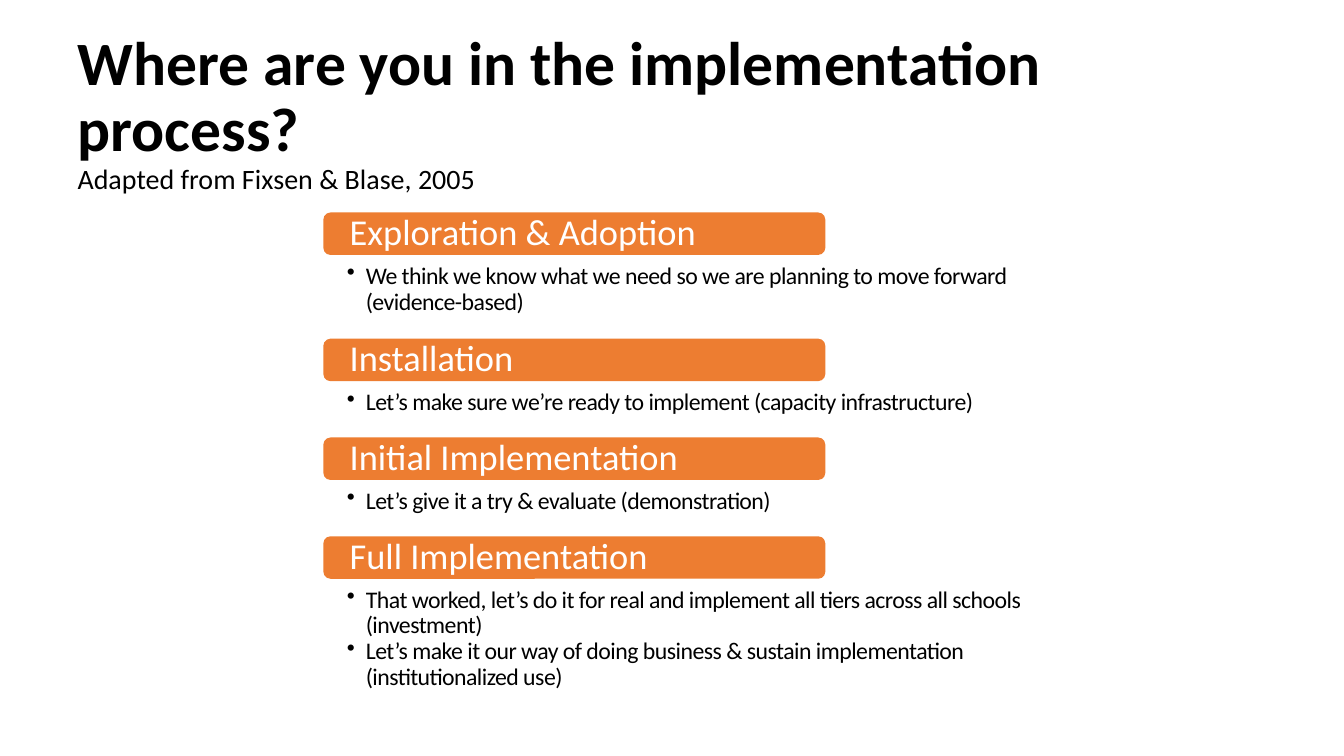
from lxml.etree import SubElement
from pptx import Presentation
from pptx.dml.color import RGBColor
from pptx.enum.shapes import MSO_SHAPE
from pptx.enum.text import MSO_ANCHOR, MSO_AUTO_SIZE, PP_ALIGN
from pptx.oxml.ns import qn
from pptx.util import Cm, Pt

QUESTION = "Where are you in the implementation process?"
CREDIT = "Adapted from Fixsen & Blase, 2005"
STAGES = [
    ("Exploration & Adoption", 2.44,
     ["We think we know what we need so we are planning to move forward (evidence-based)"]),
    ("Installation", 1.75,
     ["Let’s make sure we’re ready to implement (capacity infrastructure)"]),
    ("Initial Implementation", 1.75,
     ["Let’s give it a try & evaluate (demonstration)"]),
    ("Full Implementation", 3.76,
     ["That worked, let’s do it for real and implement all tiers across all schools (investment)",
      "Let’s make it our way of doing business & sustain implementation (institutionalized use)"]),
]

FONT = "Calibri"
BLACK = RGBColor(0x00, 0x00, 0x00)
WHITE = RGBColor(0xFF, 0xFF, 0xFF)
ORANGE = RGBColor(0xED, 0x7D, 0x31)

PANEL_LEFT, PANEL_WIDTH = 7.09, 21.23
HEADER_LEFT, HEADER_WIDTH, HEADER_HEIGHT = 8.15, 12.65, 1.07
FIRST_TOP, STAGE_GAP = 5.89, 0.74


def set_font(font, size, color, bold=False):
    font.name, font.size, font.bold = FONT, Pt(size), bold
    font.color.rgb = color


def add_box(slide, preset, place, fill, insets, anchor):
    box = slide.shapes.add_shape(preset, *(Cm(length) for length in place))
    box.shadow.inherit = False
    box.fill.solid()
    box.fill.fore_color.rgb = fill
    box.line.fill.background()
    frame = box.text_frame
    frame.word_wrap = True
    frame.vertical_anchor = anchor
    frame.margin_left, frame.margin_top, frame.margin_right, frame.margin_bottom = (
        Cm(inset) for inset in insets)
    return frame


def write_paragraph(paragraph, text, size, color):
    paragraph.text = text
    paragraph.alignment = PP_ALIGN.LEFT
    paragraph.line_spacing = 0.9
    set_font(paragraph.font, size, color)


def add_bullet(paragraph):
    properties = paragraph._p.get_or_add_pPr()
    properties.set("marL", str(Cm(0.48)))
    properties.set("indent", str(-Cm(0.48)))
    defaults = properties.find(qn("a:defRPr"))
    defaults.set("spc", "-40")
    bullet = SubElement(properties, qn("a:buChar"))
    bullet.set("char", "•")
    defaults.addprevious(bullet)


def add_title(slide):
    title = slide.shapes.title
    title.left, title.top, title.width, title.height = Cm(1.7), Cm(1.02), Cm(29.82), Cm(3.68)
    frame = title.text_frame
    frame.word_wrap = True
    frame.auto_size = MSO_AUTO_SIZE.NONE
    frame.vertical_anchor = MSO_ANCHOR.MIDDLE
    heading = frame.paragraphs[0]
    heading.alignment = PP_ALIGN.LEFT
    heading.line_spacing = 0.9
    question = heading.add_run()
    question.text = QUESTION
    set_font(question.font, 44, BLACK, True)
    heading.add_line_break()
    credit = heading.add_run()
    credit.text = CREDIT
    set_font(credit.font, 20, BLACK)


def add_stage(slide, top, name, height, statements):
    panel = add_box(slide, MSO_SHAPE.RECTANGLE, (PANEL_LEFT, top, PANEL_WIDTH, height),
                    WHITE, (1.65, 0.76, 1.65, 0.33), MSO_ANCHOR.TOP)
    for index, statement in enumerate(statements):
        paragraph = panel.add_paragraph() if index else panel.paragraphs[0]
        write_paragraph(paragraph, statement, 17, BLACK)
        add_bullet(paragraph)
    header = add_box(slide, MSO_SHAPE.ROUNDED_RECTANGLE,
                     (HEADER_LEFT, top - HEADER_HEIGHT / 2, HEADER_WIDTH, HEADER_HEIGHT),
                     ORANGE, (0.61, 0, 0.61, 0), MSO_ANCHOR.MIDDLE)
    write_paragraph(header.paragraphs[0], name, 26, WHITE)


def main():
    """Build the slide on the stages of implementation."""
    deck = Presentation()
    deck.slide_width, deck.slide_height = Cm(33.87), Cm(19.05)
    slide = deck.slides.add_slide(deck.slide_layouts[5])
    add_title(slide)
    top = FIRST_TOP
    for name, height, statements in STAGES:
        add_stage(slide, top, name, height, statements)
        top += height + STAGE_GAP
    deck.save("out.pptx")


if __name__ == "__main__":
    main()
